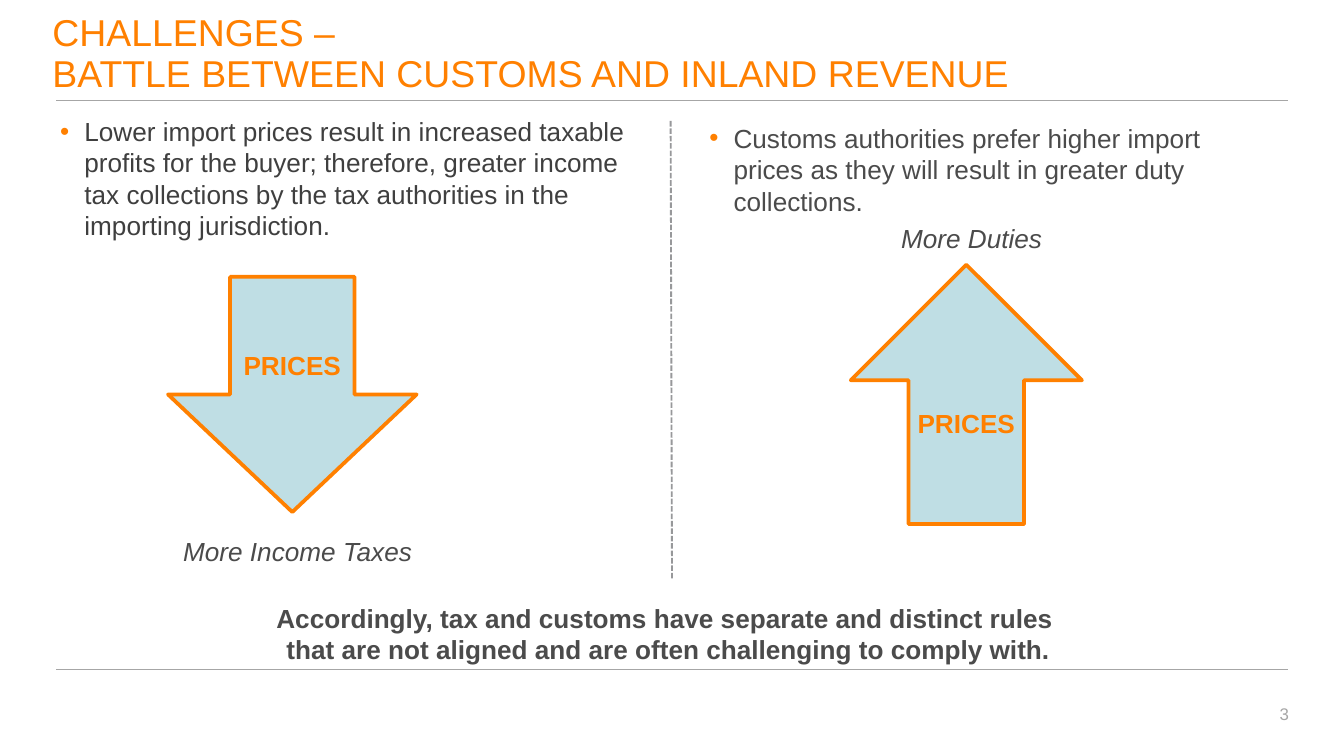
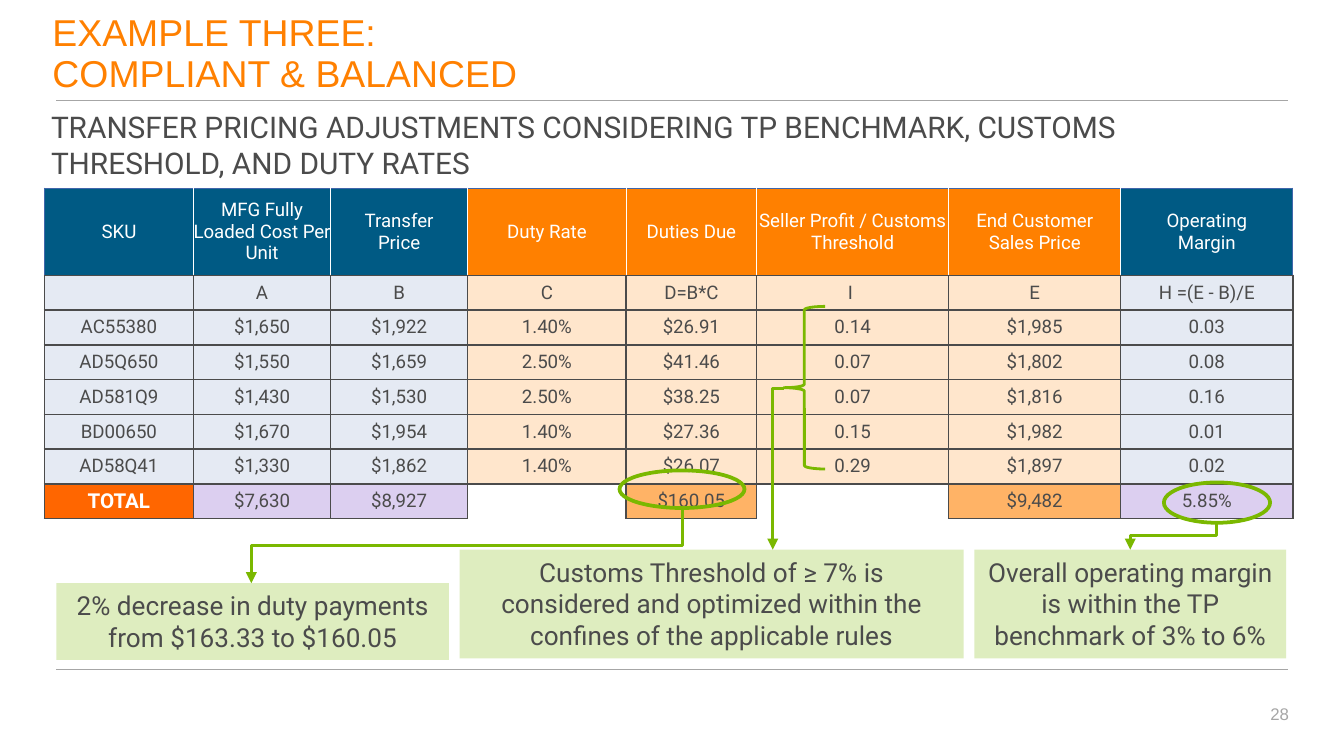
import pptx
import pptx.util
import pptx.dml.color
import pptx.enum.dml
import pptx.enum.shapes
import pptx.enum.text
import pptx.oxml
import pptx.oxml.ns
from lxml import etree

Inches, Pt = pptx.util.Inches, pptx.util.Pt
qn = pptx.oxml.ns.qn
SHAPE = pptx.enum.shapes.MSO_SHAPE
LINK = pptx.enum.shapes.MSO_CONNECTOR
ALIGN = pptx.enum.text.PP_ALIGN
ANCHOR = pptx.enum.text.MSO_ANCHOR

# Shared look
ORANGE, TEXT, DARK, GREY = "FF8000", "4B4B4B", "3F3F3F", "A6A6A6"
WHITE, NAVY, EDGE = "FFFFFF", "005A84", "4066AA"
BLUE, PEACH, AMBER, LILAC = "E5EAF3", "FFE6CC", "FFB366", "DCCFF0"
GREEN, PALE, ICE, DASH = "7AB800", "DEEDBF", "BFDEE4", "97989A"
SANS, ROBOTO = "Arial", "Roboto"
NBSP = chr(160)
FLUSH = (0, 0, 0, 0)
INSET = (0.1, 0.05, 0.1, 0.05)

# Table content
TALL, HEAD = 2.46, 0.65
WIDTHS = [1.11, 1.02, 1.02, 1.18, 0.97, 1.43, 1.28, 1.28]
HEADS = ["SKU", "MFG Fully Loaded Cost Per Unit", "Transfer Price", "Duty Rate",
         "Duties Due", "Seller Profit / Customs Threshold",
         "End Customer Sales Price", "Operating\nMargin"]
TIGHT = (1, 5)    # headings that use the full column width
WARM = range(3, 7)  # customs columns
BODY = [
    ["", "A", "B", "C", "D=B*C", "I ", "E", "H =(E - B)/E"],
    ["AC55380", "$1,650", "$1,922", "1.40%", "$26.91", "0.14", "$1,985", "0.03"],
    ["AD5Q650", "$1,550", "$1,659", "2.50%", "$41.46", "0.07", "$1,802", "0.08"],
    ["AD581Q9", "$1,430", "$1,530", "2.50%", "$38.25", "0.07", "$1,816", "0.16"],
    ["BD00650", "$1,670", "$1,954", "1.40%", "$27.36", "0.15", "$1,982", "0.01"],
    ["AD58Q41", "$1,330", "$1,862", "1.40%", "$26.07", "0.29", "$1,897", "0.02"],
]
TOTAL = ["TOTAL", "$7,630", "$8,927", "", "$160.05", "", "$9,482", "5.85%"]


def rgb(code):
    return pptx.dml.color.RGBColor.from_string(code)


def box(at):
    return [Inches(n) for n in at]


def sub(parent, tag, **attrs):
    node = etree.SubElement(parent, qn(tag))
    for key, val in attrs.items():
        node.set(key, str(val))
    return node


# Text
def write(para, text, size, color, font=SANS, bold=False, italic=False):
    """Add runs to a paragraph, with a line break at each newline."""
    for i, part in enumerate(text.split("\n")):
        if i:
            para.add_line_break()
        run = para.add_run()
        run.text = part
        run.font.size, run.font.name = Pt(size), font
        run.font.color.rgb = rgb(color)
        run.font.bold, run.font.italic = bold, italic


def frame(shape, inset=INSET, anchor=ANCHOR.TOP, align=ALIGN.LEFT, wrap=True):
    """Set up a text frame and return its first paragraph."""
    tf = shape.text_frame
    tf.word_wrap, tf.vertical_anchor = wrap, anchor
    tf.margin_left, tf.margin_top, tf.margin_right, tf.margin_bottom = box(inset)
    para = tf.paragraphs[0]
    para.alignment = align
    return para


def label(slide, at, text, size, color, font=SANS, bold=False, italic=False, **opts):
    para = frame(slide.shapes.add_textbox(*box(at)), **opts)
    write(para, text, size, color, font, bold, italic)
    return para


def bullet(slide, at, text, color):
    para = frame(slide.shapes.add_textbox(*box(at)))
    props = para._p.get_or_add_pPr()
    props.set("marL", str(Inches(0.18)))
    props.set("indent", str(-Inches(0.18)))
    sub(sub(props, "a:buClr"), "a:srgbClr", val=ORANGE)
    sub(props, "a:buFont", typeface=SANS)
    sub(props, "a:buChar", char="•")
    write(para, text, 14, color)
    sub(para._p, "a:endParaRPr", sz=1400)


# Shapes and lines
def shape(slide, kind, at, fill=None, line=None, width=1):
    item = slide.shapes.add_shape(kind, *box(at))
    item.shadow.inherit = False
    if fill:
        item.fill.solid()
        item.fill.fore_color.rgb = rgb(fill)
    else:
        item.fill.background()
    if line:
        item.line.color.rgb = rgb(line)
        item.line.width = Pt(width)
    else:
        item.line.fill.background()
    return item


def arrow(slide, kind, at):
    item = shape(slide, kind, at, ICE, ORANGE, 2)
    para = frame(item, (0.05,) * 4, ANCHOR.MIDDLE, ALIGN.CENTER)
    write(para, "PRICES", 14, ORANGE, bold=True)


def note(slide, at, text):
    item = shape(slide, SHAPE.RECTANGLE, at, PALE)
    write(frame(item, align=ALIGN.CENTER), text, 14, TEXT, ROBOTO)


def link(slide, kind, start, end, color, width):
    item = slide.shapes.add_connector(kind, *box(start + end))
    item.line.color.rgb = rgb(color)
    item.line.width = Pt(width)
    sub(item._element.spPr, "a:effectLst")
    return item


def elbow(slide, start, end, corner=False):
    """Bent arrow to lower left: down-left-down, or left-down for a corner."""
    (x1, y1), (x2, y2) = start, end
    wide, high = x1 - x2, y2 - y1
    item = link(slide, LINK.ELBOW, start, end, GREEN, 1.5)
    spot = item._element.spPr.find(qn("a:xfrm"))
    for key in ("flipH", "flipV"):
        spot.attrib.pop(key, None)
    if corner:
        item._element.spPr.find(qn("a:prstGeom")).set("prst", "bentConnector2")
        spot.set("rot", "10800000")
        spot.set("flipV", "1")
        at = (x2, y1, wide, high)
    else:
        spot.set("rot", "5400000")
        at = ((x1 + x2 - high) / 2, (y1 + y2 - wide) / 2, high, wide)
    item.left, item.top, item.width, item.height = box(at)
    sub(item.line._get_or_add_ln(), "a:tailEnd", type="triangle")


# Table
def border(cell, sides):
    """Set borders from (colour, width) pairs or None: left, right, top, bottom."""
    props = cell._tc.get_or_add_tcPr()
    for i, (side, pen) in enumerate(zip("LRTB", sides)):
        node = etree.Element(qn("a:ln" + side))
        if pen:
            node.set("w", str(Pt(pen[1])))
            sub(sub(node, "a:solidFill"), "a:srgbClr", val=pen[0])
        else:
            sub(node, "a:noFill")
        props.insert(i, node)


def fill_cell(cell, text, fill, sides, color=TEXT, size=10, bold=False, inset=FLUSH):
    cell.vertical_anchor = ANCHOR.MIDDLE
    cell.margin_left, cell.margin_top, cell.margin_right, cell.margin_bottom = box(inset)
    for i, part in enumerate(text.split("\n")):
        para = cell.text_frame.add_paragraph() if i else cell.text_frame.paragraphs[0]
        para.alignment = ALIGN.CENTER
        if part:
            write(para, part, size, color, ROBOTO, bold)
        else:
            sub(para._p, "a:endParaRPr", sz=size * 100)
    if fill:
        cell.fill.solid()
        cell.fill.fore_color.rgb = rgb(fill)
    else:
        cell.fill.background()
    border(cell, sides)


def prices(slide):
    last = len(WIDTHS) - 1
    rows = len(BODY) + 2
    grid = slide.shapes.add_table(rows, last + 1, *box((0.33, 1.4, 9.29, TALL))).table
    grid.first_row = grid.horz_banding = False
    for i, row in enumerate(grid.rows):
        row.height = Inches((TALL - HEAD) / (rows - 1) if i else HEAD)
    rule, rim, thin = (TEXT, 1), (EDGE, 0.5), (WHITE, 0.5)
    for j, wide in enumerate(WIDTHS):
        grid.columns[j].width = Inches(wide)
        warm = j in WARM
        fill_cell(grid.cell(0, j), HEADS[j], ORANGE if warm else NAVY,
                  (thin if j else rim, thin if j < last else rim, rim, rule), WHITE,
                  inset=FLUSH if j in TIGHT else (0.1, 0.04, 0.1, 0.04))
        for i, row in enumerate(BODY, 1):
            fill_cell(grid.cell(i, j), row[j], PEACH if warm else BLUE, (rule,) * 4)
        foot = grid.cell(rows - 1, j)
        if j == 0:
            fill_cell(foot, TOTAL[j], "FF6600", (rule,) * 4, WHITE, 11, True)
        elif TOTAL[j]:
            fill_cell(foot, TOTAL[j], AMBER if warm else LILAC, (rule,) * 4)
        else:
            fill_cell(foot, "", None, (rule, rule, rule, None))


# Slides
def base(deck, title, number):
    slide = deck.slides.add_slide(deck.slide_layouts[6])
    for y in (4.98, 0.75):
        link(slide, LINK.STRAIGHT, (0.42, y), (9.58, y), GREY, 0.5)
    label(slide, (9.26, 5.19, 0.43, 0.25), number, 9, GREY, align=ALIGN.RIGHT)
    para = label(slide, (0.39, 0.08, 9.19, 0.63), title, 20, ORANGE,
                 inset=FLUSH, anchor=ANCHOR.BOTTOM)
    para.line_spacing = 0.9
    return slide


def battle(deck):
    slide = base(deck, "CHALLENGES – \nBATTLE BETWEEN CUSTOMS AND INLAND REVENUE", "3")
    arrow(slide, SHAPE.DOWN_ARROW, (1.25, 2.06, 1.85, 1.75))
    bullet(slide, (0.35, 0.81, 4.43, 1.08),
           "Lower import prices result in increased taxable profits for the buyer; "
           "therefore, greater income tax collections by the tax authorities in the "
           "importing jurisdiction.", DARK)
    bullet(slide, (5.18, 0.86, 4.57, 0.81),
           f"Customs authorities prefer higher import prices{NBSP}as they will result "
           "in greater duty collections.", TEXT)
    mid = dict(inset=FLUSH, anchor=ANCHOR.MIDDLE, align=ALIGN.CENTER)
    label(slide, (0.33, 4.48, 9.29, 0.47),
          "Accordingly, tax and customs have separate and distinct rules \n"
          "that are not aligned and are often challenging to comply with.",
          14, TEXT, bold=True, **mid)
    for at, text in (((1.36, 3.98, 1.71, 0.24), "More Income Taxes"),
                     ((6.7, 1.65, 1.06, 0.24), "More Duties")):
        label(slide, at, text, 14, TEXT, italic=True, wrap=False, **mid)
    split = link(slide, LINK.STRAIGHT, (4.99, 0.9), (5, 4.31), DASH, 1)
    split.line.dash_style = pptx.enum.dml.MSO_LINE.SQUARE_DOT
    arrow(slide, SHAPE.UP_ARROW, (6.33, 1.97, 1.72, 1.93))


def example(deck):
    slide = base(deck, "EXAMPLE THREE: \nCOMPLIANT & BALANCED", "28")
    prices(slide)
    # Duty payments
    note(slide, (0.42, 4.34, 2.92, 0.57),
         "2% decrease in duty payments from $163.33 to $160.05")
    elbow(slide, (5.08, 3.78), (1.87, 4.34))
    shape(slide, SHAPE.OVAL, (4.61, 3.5, 0.93, 0.28), line=GREEN, width=2)
    # Customs threshold
    shape(slide, SHAPE.LEFT_BRACE, (5.83, 2.28, 0.31, 1.21), line=GREEN, width=1.5)
    note(slide, (3.42, 4.09, 3.75, 0.81),
         "Customs Threshold of ≥ 7% is considered and optimized within the confines "
         "of the applicable rules")
    elbow(slide, (5.83, 2.89), (5.75, 4.09), corner=True)
    # Operating margin
    shape(slide, SHAPE.OVAL, (8.66, 3.59, 0.79, 0.3), line=GREEN, width=2)
    note(slide, (7.25, 4.09, 2.32, 0.81),
         "Overall operating margin is within the TP benchmark of 3% to 6%")
    elbow(slide, (9.05, 3.88), (8.41, 4.09))
    label(slide, (0.38, 0.81, 8.43, 0.54),
          "TRANSFER PRICING ADJUSTMENTS CONSIDERING TP BENCHMARK, CUSTOMS THRESHOLD, "
          "AND DUTY RATES", 16, TEXT, ROBOTO, inset=(0, 0, 0.2, 0))


def main():
    deck = pptx.Presentation()
    # Widescreen, 16 to 9
    deck.slide_width = Inches(10)
    deck.slide_height = Inches(10 * 9 / 16)
    battle(deck)
    example(deck)
    deck.save("out.pptx")


if __name__ == "__main__":
    main()
